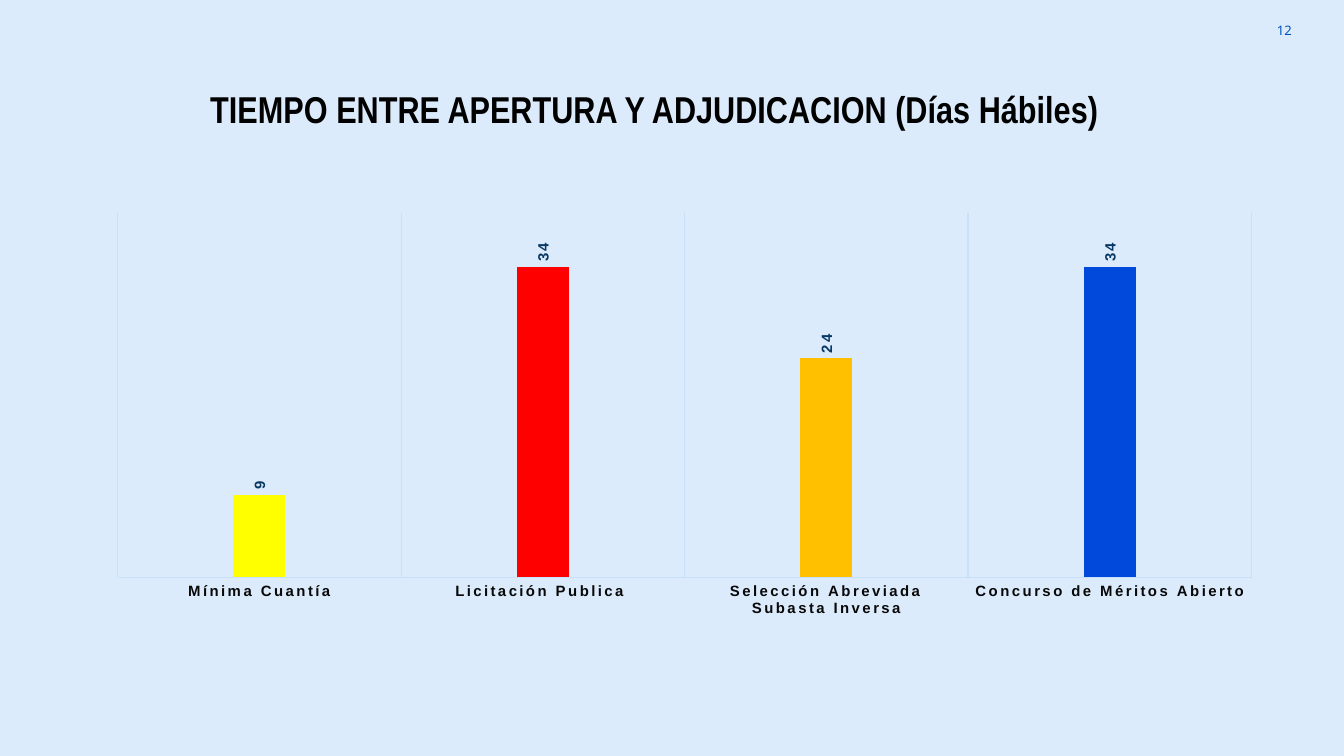
from lxml import etree
from pptx import Presentation
from pptx import util as u
from pptx.chart.data import CategoryChartData
from pptx.dml.color import RGBColor
from pptx.enum import chart as charts, text
from pptx.oxml import parse_xml
from pptx.oxml.ns import nsdecls, qn


def color(value):
    return RGBColor.from_string(value)


class SlideBuilder:
    def __init__(self, presentation, background):
        self.slide = presentation.slides.add_slide(presentation.slide_layouts[6])
        self.fill_solid(self.slide.background.fill, background)

    def fill_solid(self, fill, hue):
        fill.solid()
        fill.fore_color.rgb = color(hue)

    def style_font(self, font, name, size, hue, bold=False):
        font.name = name
        font.size = u.Pt(size)
        font.bold = bold
        font.color.rgb = color(hue)

    def style_line(self, line, hue, width=0.75):
        line.color.rgb = color(hue)
        line.width = u.Pt(width)

    def add_text(self, words, box, align, font, wrap=True):
        shape = self.slide.shapes.add_textbox(*map(u.Inches, box))
        frame = shape.text_frame
        frame.word_wrap = wrap
        frame.vertical_anchor = text.MSO_ANCHOR.MIDDLE
        paragraph = frame.paragraphs[0]
        paragraph.text = words
        paragraph.alignment = align
        self.style_font(paragraph.font, *font)

    def add_columns(self, columns, box, layout, line_hue):
        data = CategoryChartData(number_format="0")
        data.categories = [name for name, _, _ in columns]
        data.add_series("Series 1", [])
        data.add_series("Series 2", [])
        data.add_series("Series 3", [value for _, value, _ in columns])
        chart = self.slide.shapes.add_chart(
            charts.XL_CHART_TYPE.COLUMN_CLUSTERED, *map(u.Inches, box), data
        ).chart
        chart.has_legend = False
        chart.has_title = False
        self.style_font(chart.font, "Arial", 10, "073763")
        self.style_plot(chart.plots[0], [hue for _, _, hue in columns])
        self.style_axes(chart, line_hue)
        self.place_plot(chart, layout)

    def style_plot(self, plot, hues):
        plot.gap_width = 444
        plot.overlap = -90
        plot.vary_by_categories = False
        styles = [("E4EDFE", "429EF2", False), ("B7CFFF", "429EF2", False),
                  ("88ACF8", "073763", True)]
        for series, (hue, label_hue, bold) in zip(plot.series, styles):
            self.fill_solid(series.format.fill, hue)
            self.style_labels(series.data_labels, label_hue, bold)
        for index, hue in enumerate(hues):
            self.fill_solid(plot.series[2].points[index].format.fill, hue)

    def style_labels(self, labels, hue, bold):
        labels.show_value = True
        labels.number_format = "0"
        labels.number_format_is_linked = False
        labels.position = charts.XL_LABEL_POSITION.OUTSIDE_END
        self.style_font(labels.font, "Arial", 8, hue, bold)
        labels.font._element.set("spc", "120")
        body = next(labels.font._element.iterancestors(qn("c:txPr"))).find(qn("a:bodyPr"))
        body.set("rot", "-5400000")
        body.set("vert", "horz")

    def style_axes(self, chart, line_hue):
        values = chart.value_axis
        values.minimum_scale = 0
        values.maximum_scale = 40
        values.has_major_gridlines = False
        values.visible = False
        categories = chart.category_axis
        categories.major_tick_mark = charts.XL_TICK_MARK.NONE
        categories.has_major_gridlines = True
        self.style_line(categories.major_gridlines.format.line, line_hue)
        self.style_line(categories.format.line, line_hue)
        font = categories.tick_labels.font
        self.style_font(font, "Arial", 8, "080808", True)
        font._element.set("spc", "120")

    def place_plot(self, chart, layout):
        area = chart._chartSpace.chart.plotArea
        for old in area.findall(qn("c:layout")):
            area.remove(old)
        element = parse_xml(f"<c:layout {nsdecls('c')}><c:manualLayout/></c:layout>")
        settings = [("layoutTarget", "inner"), ("xMode", "edge"), ("yMode", "edge")]
        for name, value in settings + list(zip("xywh", layout)):
            etree.SubElement(element[0], qn(f"c:{name}")).set("val", str(value))
        area.insert(0, element)


def main():
    presentation = Presentation()
    presentation.slide_width = u.Inches(10)
    presentation.slide_height = presentation.slide_width * 9 // 16
    builder = SlideBuilder(presentation, "DCEBFB")
    builder.add_text("12", (9.11, 0.01, 0.6, 0.43), text.PP_ALIGN.RIGHT,
                     ("Noto Sans", 7, "0054BC"))
    builder.add_text("TIEMPO ENTRE APERTURA Y ADJUDICACION (Días Hábiles)",
                     (1.42, 0.59, 6.9, 0.44), text.PP_ALIGN.CENTER,
                     ("Arial Narrow", 20, "000000", True), wrap=False)
    columns = [
        ("Mínima Cuantía", 9, "FFFF00"),
        ("Licitación Publica ", 34, "FF0000"),
        ("Selección Abreviada Subasta Inversa", 24, "FFC000"),
        ("Concurso de Méritos Abierto", 34, "0049DB"),
    ]
    builder.add_columns(columns, (0.7, 1.52, 8.79, 3.12), (0.02, 0.02, 0.96, 0.87), "C6E2FB")
    presentation.save("out.pptx")


if __name__ == "__main__":
    main()
